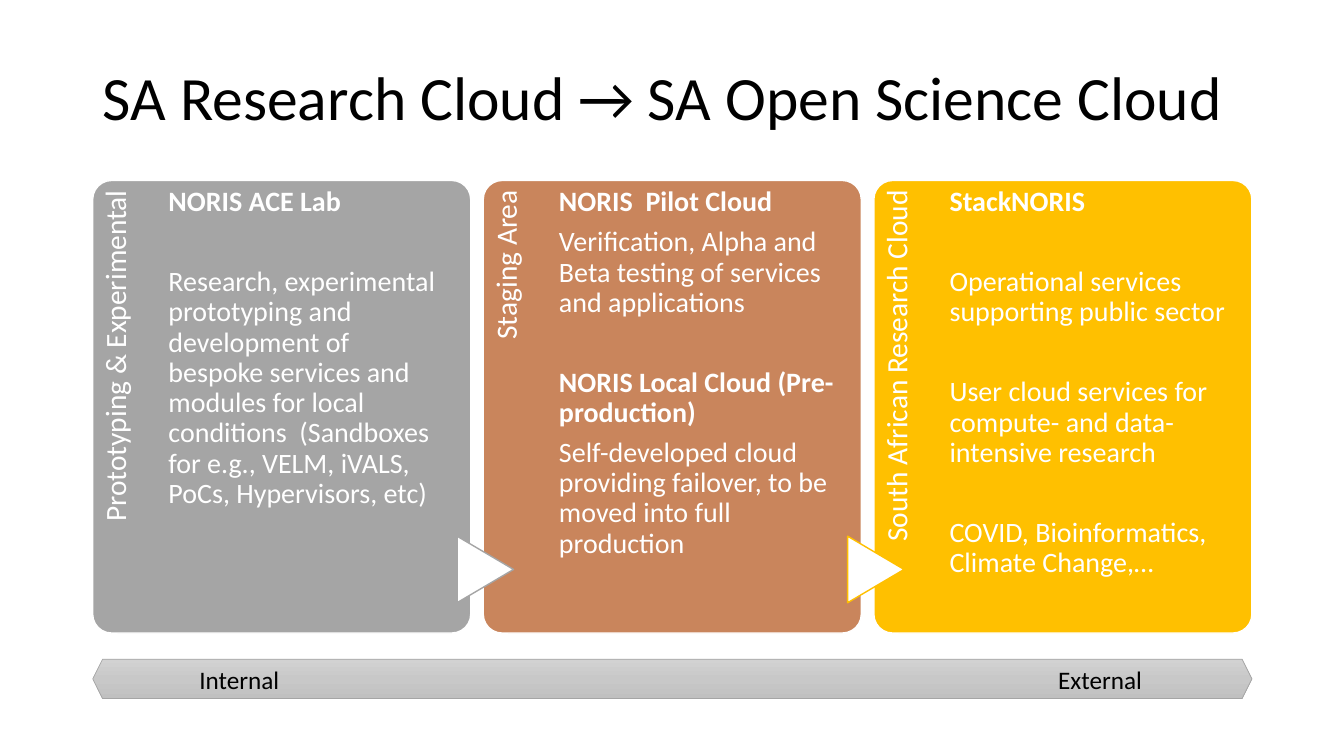
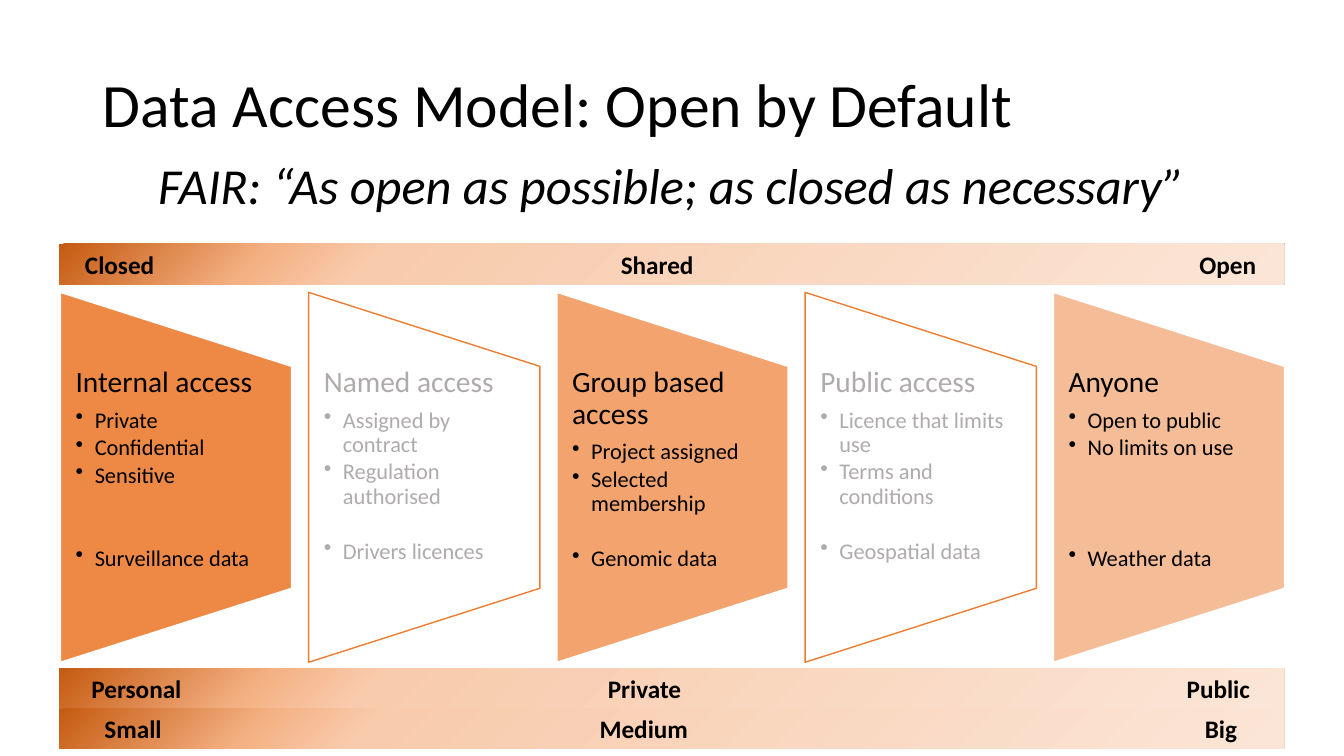
from dataclasses import dataclass

from lxml.etree import SubElement
from pptx import Presentation
from pptx.dml.color import RGBColor
from pptx.enum.shapes import MSO_SHAPE as Shape
from pptx.enum.text import MSO_ANCHOR as Anchor, PP_ALIGN as Align
from pptx.oxml.ns import qn
from pptx.util import Inches, Pt

BLACK = RGBColor(0x00, 0x00, 0x00)
WHITE = RGBColor(0xFF, 0xFF, 0xFF)
GREY = RGBColor(0xA5, 0xA5, 0xA5)
FADED = RGBColor(0xAF, 0xAB, 0xAB)
COPPER = RGBColor(0xC9, 0x85, 0x5C)
GOLD = RGBColor(0xFF, 0xC0, 0x00)
ORANGE = RGBColor(0xED, 0x7D, 0x31)
SILVER_STOPS = [(0, RGBColor(0xD2, 0xD2, 0xD2)), (50, RGBColor(0xC8, 0xC8, 0xC8)),
                (100, RGBColor(0xC0, 0xC0, 0xC0))]
EMBER_STOPS = [(0, RGBColor(0xFB, 0xE5, 0xD6)), (74, RGBColor(0xF8, 0xCB, 0xAD)),
               (83, RGBColor(0xF4, 0xB1, 0x83)), (100, RGBColor(0xC5, 0x5A, 0x11))]

CONTENT_LEFT, CONTENT_WIDTH = 6.9, 86.25
WIDE_LEFT, WIDE_WIDTH = 4.4, 91.15
BAND_HEIGHT = 5.33


@dataclass
class Line:
    text: str
    size: float = 18
    color: RGBColor = BLACK
    bold: bool = False
    italic: bool = False
    align: Align = Align.LEFT
    before: float = 0
    after: float = 0
    spacing: float = 0.9
    bullet: bool = False


class Deck:
    """Style and current page; every area is left, top, width, height in percent of the slide."""

    font = "Calibri"

    def __init__(self):
        self.file = Presentation()
        self.file.slide_width, self.file.slide_height = Inches(13.33), Inches(7.5)
        self.page = None

    def area(self, left, top, width, height):
        across, down = self.file.slide_width / 100, self.file.slide_height / 100
        return [round(n) for n in (left * across, top * down, width * across, height * down)]

    def new_page(self, title, top, height):
        self.page = self.file.slides.add_slide(self.file.slide_layouts[5])
        box = self.page.shapes.title
        box.left, box.top, box.width, box.height = self.area(
            CONTENT_LEFT, top, CONTENT_WIDTH, height)
        box.text_frame.vertical_anchor = Anchor.MIDDLE
        self.set_lines(box, [Line(title, 44)])

    def set_lines(self, box, lines):
        frame = box.text_frame
        frame.word_wrap = True
        frame.text = "\n".join(line.text for line in lines)
        for para, line in zip(frame.paragraphs, lines):
            para.alignment, para.line_spacing = line.align, line.spacing
            para.space_before, para.space_after = Pt(line.before), Pt(line.after)
            if line.bullet:
                props = para._p.get_or_add_pPr()
                props.set("marL", str(Inches(0.19)))
                props.set("indent", str(-Inches(0.19)))
                SubElement(props, qn("a:buChar")).set("char", "•")
            for span in para.runs:
                font = span.font
                font.name, font.size = self.font, Pt(line.size)
                font.bold, font.italic = line.bold, line.italic
                font.color.rgb = line.color

    def text(self, area, lines, insets=(0, 0, 0, 0), anchor=Anchor.TOP, turn=0):
        """Insets are left, top, right, bottom in inches."""
        box = self.page.shapes.add_textbox(*self.area(*area))
        frame = box.text_frame
        (frame.margin_left, frame.margin_top,
         frame.margin_right, frame.margin_bottom) = map(Inches, insets)
        frame.vertical_anchor = anchor
        self.set_lines(box, lines)
        self.turn(box, turn)

    def shape(self, kind, area, fill=None, line=None, width=1, turn=0, opacity=100):
        shape = self.page.shapes.add_shape(kind, *self.area(*area))
        shape.shadow.inherit = False
        if fill is None:
            shape.fill.background()
        else:
            shape.fill.solid()
            shape.fill.fore_color.rgb = fill
            if opacity < 100:
                color = shape._element.spPr.find(".//" + qn("a:srgbClr"))
                SubElement(color, qn("a:alpha")).set("val", str(opacity * 1000))
        if line is None:
            shape.line.fill.background()
        else:
            shape.line.color.rgb, shape.line.width = line, Pt(width)
        self.turn(shape, turn)
        return shape

    @staticmethod
    def turn(shape, degrees):
        """Turn by a quarter so that the shape still covers the area it was given."""
        if degrees:
            shift = (shape.width - shape.height) // 2
            shape.left, shape.top = shape.left + shift, shape.top - shift
            shape.width, shape.height = shape.height, shape.width
            shape.rotation = degrees

    @staticmethod
    def gradient(shape, stops, radial):
        shape.fill.gradient()
        grad = shape._element.spPr.find(qn("a:gradFill"))
        for child in list(grad):
            grad.remove(child)
        holder = SubElement(grad, qn("a:gsLst"))
        for position, color in stops:
            stop = SubElement(holder, qn("a:gs"), pos=str(position * 1000))
            SubElement(stop, qn("a:srgbClr"), val=str(color))
        if radial:
            course = SubElement(grad, qn("a:path"), path="circle")
            SubElement(course, qn("a:fillToRect"), l="100000", t="100000")
        else:
            SubElement(grad, qn("a:lin"), ang="5400000", scaled="0")

    def band(self, kind, area, stops, labels, radial=True, line=None, bold=True):
        """Labels are pairs of text and centre."""
        shape = self.shape(kind, area, WHITE, line, 0.5)
        self.gradient(shape, stops, radial)
        label_width = 12
        for label, centre in labels:
            self.text((centre - label_width / 2, area[1], label_width, area[3]),
                      [Line(label, bold=bold, align=Align.CENTER, spacing=1)],
                      anchor=Anchor.MIDDLE)

    def panel(self, left, width, color, label, entries):
        """Entries are text, bold, and whether a free line stands before it."""
        top, height, label_width = 23.87, 59.87, 5.63
        box = self.shape(Shape.ROUNDED_RECTANGLE, (left, top, width, height), color, WHITE)
        box.adjustments[0] = 0.05
        self.text((left, top, label_width, 49.2),
                  [Line(label, 21, WHITE, align=Align.RIGHT)], (0, 0.08, 0.1, 0), turn=270)
        self.text((left + label_width, top, 20.93, height),
                  [Line(text, 20, WHITE, bold, before=28.5 * free, after=7)
                   for text, bold, free in entries], (0, 0.07, 0, 0))

    def access_step(self, left, width, opacity, heading, points, free_lines, example):
        area = (left, 38.67, width, 48.93)
        if opacity:
            self.shape(Shape.FLOWCHART_MANUAL_OPERATION, area, ORANGE, WHITE,
                       turn=270, opacity=opacity)
        else:
            self.shape(Shape.FLOWCHART_MANUAL_OPERATION, area, line=ORANGE, turn=270)
        color = BLACK if opacity else FADED
        lines = [Line(heading, 21, color, after=7.35)]
        lines += [Line(point, 16, color, after=2.4, bullet=True) for point in points]
        lines.append(Line(example, 16, color, before=19.7 * free_lines, bullet=True))
        self.text((left, 48.53, width, 29.33), lines, (0.15, 0, 0.15, 0))


PANELS = [
    (GREY, "Prototyping & Experimental", [
        ("NORIS ACE Lab", True, False),
        ("Research, experimental prototyping and development of bespoke services and "
         "modules for local conditions  (Sandboxes for e.g., VELM, iVALS, PoCs, "
         "Hypervisors, etc)", False, True)]),
    (COPPER, "Staging Area", [
        ("NORIS  Pilot Cloud", True, False),
        ("Verification, Alpha and Beta testing of services and applications", False, False),
        ("NORIS Local Cloud (Pre-production)", True, True),
        ("Self-developed cloud providing failover, to be moved into full production",
         False, False)]),
    (GOLD, "South African Research Cloud", [
        ("StackNORIS", True, False),
        ("Operational services supporting public sector", False, True),
        ("User cloud services for compute- and data- intensive research", False, True),
        ("COVID, Bioinformatics, Climate Change,…", False, True)]),
]

ACCESS_STEPS = [
    (90, "Internal access", ["Private", "Confidential", "Sensitive"], 2, "Surveillance data"),
    (0, "Named access", ["Assigned by contract", "Regulation authorised"], 1,
     "Drivers licences"),
    (70, "Group based access", ["Project assigned", "Selected membership"], 1,
     "Genomic data"),
    (0, "Public access", ["Licence that limits use", "Terms and conditions"], 1,
     "Geospatial data"),
    (50, "Anyone", ["Open to public", "No limits on use"], 3, "Weather data"),
]

SCALES = [
    (32.27, [("Closed", 8.9), ("Shared", 48.9), ("Open", 91.35)]),
    (88.4, [("Personal", 10.15), ("Private", 47.95), ("Public", 90.65)]),
    (93.73, [("Small", 9.9), ("Medium", 47.9), ("Big", 90.85)]),
]


def research_cloud(deck):
    deck.new_page("SA Research Cloud → SA Open Science Cloud", 5.33, 16)
    width = 28.13
    pitch = (CONTENT_WIDTH - width) / (len(PANELS) - 1)
    lefts = [CONTENT_LEFT + i * pitch for i in range(len(PANELS))]
    for left, panel in zip(lefts, PANELS):
        deck.panel(left, width, *panel)
    for left, color in zip(lefts[1:], (GREY, GOLD)):
        deck.shape(Shape.FLOWCHART_EXTRACT, (left - 1.95, 70.93, 4.2, 8.8),
                   WHITE, color, turn=90)
    deck.band(Shape.HEXAGON, (CONTENT_LEFT, 87.2, CONTENT_WIDTH, 5.2), SILVER_STOPS,
              [("Internal", 17.8), ("External", 81.85)], radial=False, line=GREY, bold=False)


def data_access(deck):
    deck.new_page("Data Access Model: Open by Default", 4.53, 19.33)
    for top, labels in SCALES:
        deck.band(Shape.RECTANGLE, (WIDE_LEFT, top, WIDE_WIDTH, BAND_HEIGHT),
                  EMBER_STOPS, labels)
    first, width, pitch = 4.5, 17.2, 18.47
    for i, step in enumerate(ACCESS_STEPS):
        deck.access_step(first + i * pitch, width, *step)
    deck.text((WIDE_LEFT, 19.87, WIDE_WIDTH, 8.93),
              [Line("FAIR: “As open as possible; as closed as necessary”", 36,
                    italic=True, align=Align.CENTER, spacing=1)], anchor=Anchor.MIDDLE)


def main():
    deck = Deck()
    research_cloud(deck)
    data_access(deck)
    deck.file.save("out.pptx")


if __name__ == "__main__":
    main()
